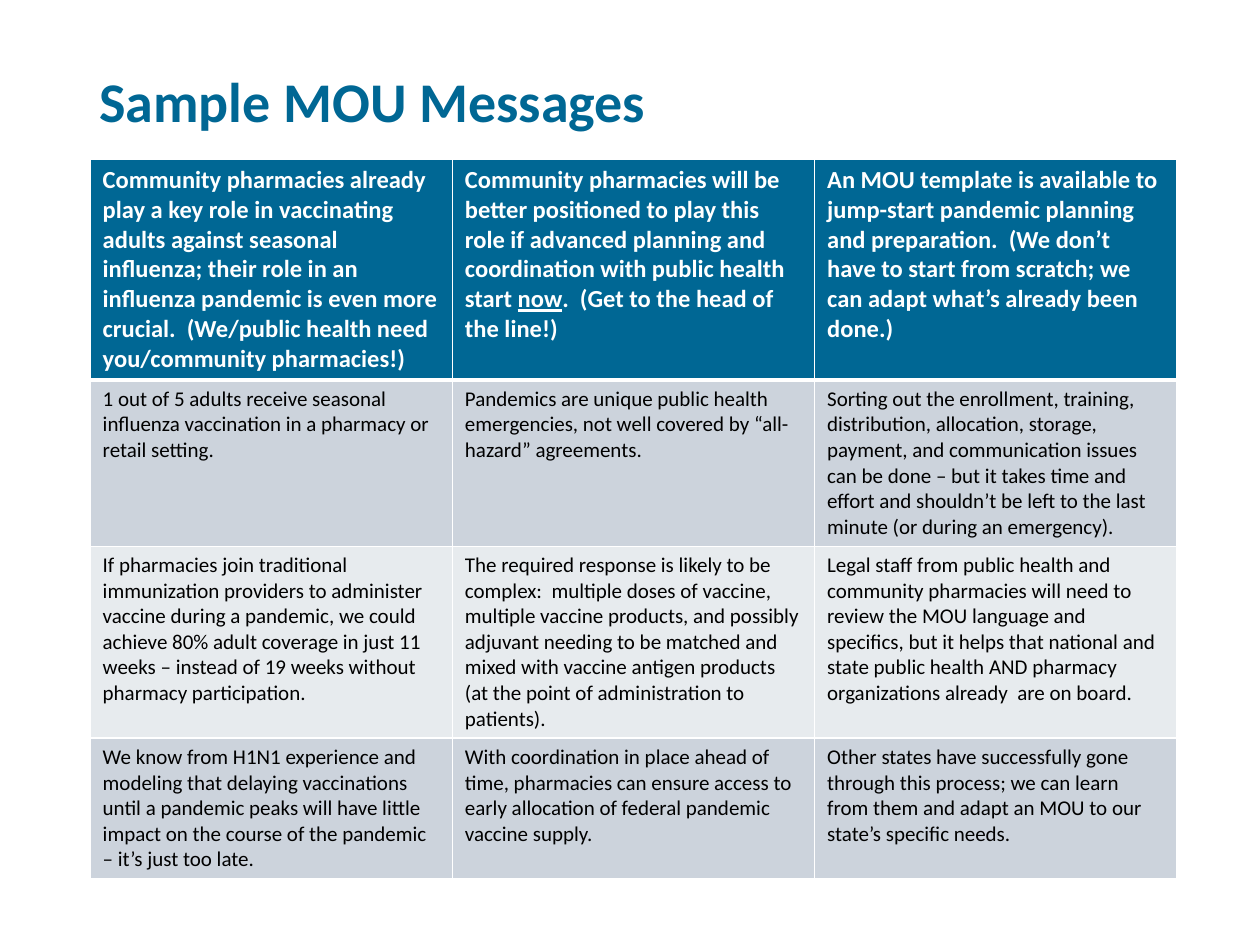
from dataclasses import dataclass

from lxml import etree
from pptx import Presentation
from pptx.dml.color import RGBColor
from pptx.enum import text
from pptx.oxml import ns
from pptx.util import Pt


@dataclass(frozen=True)
class Theme:
    font: str = "Calibri"
    blue: str = "006794"
    white: str = "FFFFFF"
    black: str = "000000"
    bands: tuple = ("CCD3DC", "E7EBEE")
    title_size: int = 32
    header_size: int = 14
    body_size: int = 12


theme = Theme()

# Underscores mark underlined words.
MESSAGES = [
    [
        "Community pharmacies already play a key role in vaccinating adults against seasonal influenza; their role in an influenza pandemic is even more crucial.  (We/public health need you/community pharmacies!)",
        "Community pharmacies will be better positioned to play this role if advanced planning and coordination with public health start _now_.  (Get to the head of the line!)",
        "An MOU template is available to jump-start pandemic planning and preparation.  (We don’t have to start from scratch; we can adapt what’s already been done.)",
    ],
    [
        "1 out of 5 adults receive seasonal influenza vaccination in a pharmacy or retail setting.",
        "Pandemics are unique public health emergencies, not well covered by “all-hazard” agreements.",
        "Sorting out the enrollment, training, distribution, allocation, storage, payment, and communication issues can be done – but it takes time and effort and shouldn’t be left to the last minute (or during an emergency).",
    ],
    [
        "If pharmacies join traditional immunization providers to administer vaccine during a pandemic, we could achieve 80% adult coverage in just 11 weeks – instead of 19 weeks without pharmacy participation.",
        "The required response is likely to be complex:  multiple doses of vaccine, multiple vaccine products, and possibly adjuvant needing to be matched and mixed with vaccine antigen products (at the point of administration to patients).",
        "Legal staff from public health and community pharmacies will need to review the MOU language and specifics, but it helps that national and state public health AND pharmacy organizations already  are on board.",
    ],
    [
        "We know from H1N1 experience and modeling that delaying vaccinations until a pandemic peaks will have little impact on the course of the pandemic – it’s just too late.",
        "With coordination in place ahead of time, pharmacies can ensure access to early allocation of federal pandemic vaccine supply.",
        "Other states have successfully gone through this process; we can learn from them and adapt an MOU to our state’s specific needs.",
    ],
]
ROW_HEIGHTS = [126, 95, 109.5, 80]


def format_run(run, size, color, bold):
    run.font.name = theme.font
    run.font.size = Pt(size)
    run.font.bold = bold
    run.font.color.rgb = RGBColor.from_string(color)


def add_borders(cell, widths):
    """Draw white borders; widths are in points, for left, right, top, bottom."""
    properties = cell._tc.get_or_add_tcPr()
    for tag, width in zip(("a:lnL", "a:lnR", "a:lnT", "a:lnB"), widths):
        line = etree.SubElement(properties, ns.qn(tag), w=str(Pt(width)))
        fill = etree.SubElement(line, ns.qn("a:solidFill"))
        etree.SubElement(fill, ns.qn("a:srgbClr"), val=theme.white)


presentation = Presentation()
presentation.slide_width, presentation.slide_height = Pt(720), Pt(540)
slide = presentation.slides.add_slide(presentation.slide_layouts[5])

title = slide.shapes.title
title.left, title.top, title.width, title.height = Pt(49.5), Pt(33), Pt(621), Pt(47)
title.text_frame.text = "Sample MOU Messages"
title.text_frame.vertical_anchor = text.MSO_ANCHOR.BOTTOM
title.text_frame.paragraphs[0].alignment = text.PP_ALIGN.LEFT
format_run(title.text_frame.paragraphs[0].runs[0], theme.title_size, theme.blue, True)

table = slide.shapes.add_table(
    len(MESSAGES), len(MESSAGES[0]), Pt(51.5), Pt(90.75), Pt(621), Pt(sum(ROW_HEIGHTS))
).table
for row, height in zip(table.rows, ROW_HEIGHTS):
    row.height = Pt(height)

for row_index, messages in enumerate(MESSAGES):
    is_header = row_index == 0
    if is_header:
        size, color, background = theme.header_size, theme.white, theme.blue
    else:
        size, color = theme.body_size, theme.black
        background = theme.bands[(row_index - 1) % 2]
    top_width = 3 if row_index == 1 else 1
    bottom_width = 3 if is_header else 1

    for column_index, message in enumerate(messages):
        cell = table.cell(row_index, column_index)
        add_borders(cell, (1, 1, top_width, bottom_width))
        cell.fill.solid()
        cell.fill.fore_color.rgb = RGBColor.from_string(background)
        paragraph = cell.text_frame.paragraphs[0]
        for part_index, part in enumerate(message.split("_")):
            run = paragraph.add_run()
            run.text = part
            format_run(run, size, color, is_header)
            if part_index % 2:
                run.font.underline = True

presentation.save("out.pptx")
